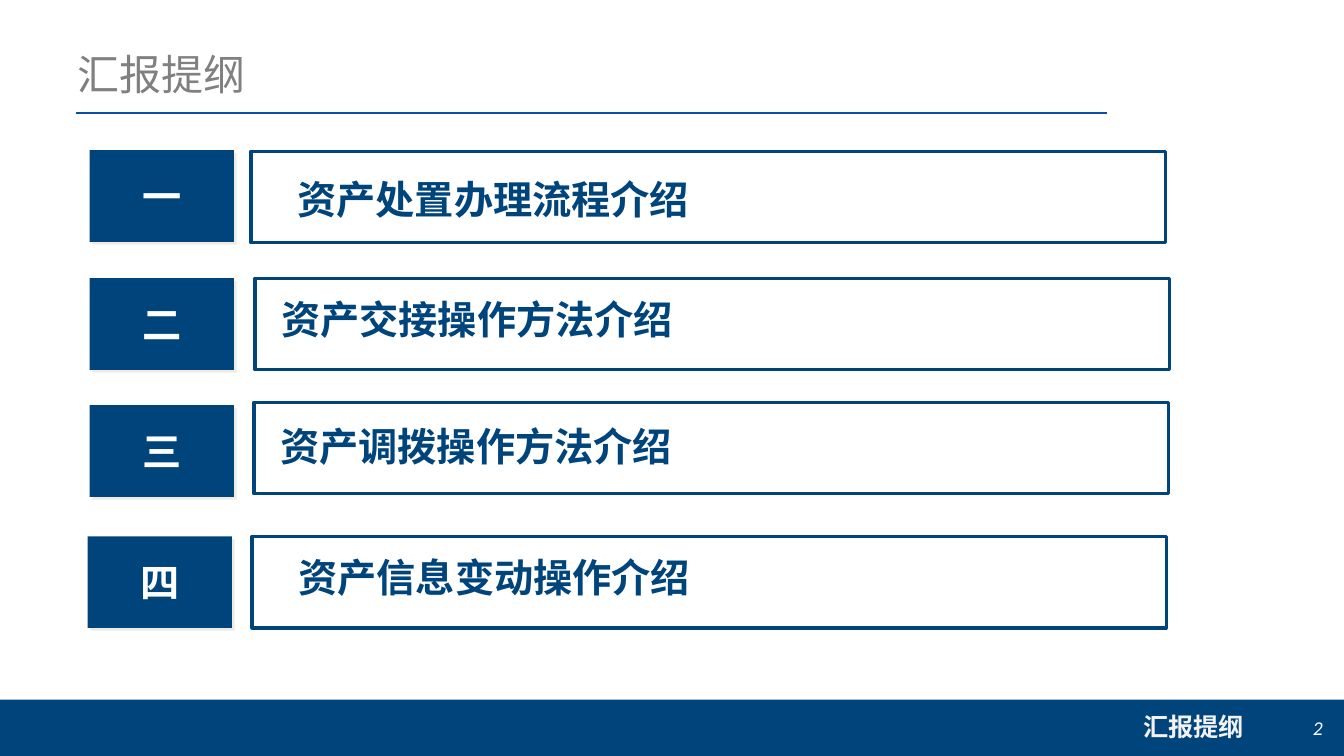
from lxml.etree import SubElement
from pptx import Presentation
from pptx.dml.color import RGBColor
from pptx.enum.shapes import MSO_CONNECTOR as Link, MSO_SHAPE as Shape
from pptx.enum.text import MSO_ANCHOR as Anchor, MSO_AUTO_SIZE as Fit, PP_ALIGN as Align
from pptx.oxml.ns import qn
from pptx.util import Inches, Pt

NAVY = RGBColor(0x00, 0x44, 0x7C)
BLUE = RGBColor(0x0B, 0x4D, 0xA2)
GRAY = RGBColor(0x80, 0x80, 0x80)
PALE = RGBColor(0xF2, 0xF2, 0xF2)
SAND = RGBColor(0xEE, 0xEC, 0xE1)
WHITE = RGBColor(0xFF, 0xFF, 0xFF)
HAN = "Noto Sans CJK SC"
HEAD = dict(name="Calibri", size=Pt(30), bold=False)
ITEM = dict(name=HAN, size=Pt(28), bold=True)
FOOT = dict(name=HAN, size=Pt(18), bold=True)
PAGE = dict(name="Calibri", size=Pt(14), italic=True)

# number, label, tile (left, top), frame (left, top), label (left, top)
ROWS = [
    ("一", "资产处置办理流程介绍", (0.89, 1.49), (2.49, 1.5), (2.95, 1.74)),
    ("二", "资产交接操作方法介绍", (0.89, 2.76), (2.53, 2.76), (2.79, 2.93)),
    ("三", "资产调拨操作方法介绍", (0.89, 4.02), (2.52, 3.99), (2.78, 4.19)),
    ("四", "资产信息变动操作介绍", (0.87, 5.32), (2.5, 5.32), (2.96, 5.49)),
]


def write(shape, text, style, color, align=Align.LEFT, anchor=Anchor.MIDDLE):
    frame = shape.text_frame
    layout = dict(word_wrap=True, auto_size=Fit.NONE, vertical_anchor=anchor)
    for key, value in layout.items():
        setattr(frame, key, value)
    para = frame.paragraphs[0]
    para.alignment = align
    run = para.add_run()
    run.text = text
    for key, value in style.items():
        setattr(run.font, key, value)
    run.font.color.rgb = color
    if style["name"] == HAN:
        SubElement(run._r.get_or_add_rPr(), qn("a:ea"), typeface=HAN)
    return para


def add_box(slide, left, top, width, height, fill, line=None):
    box = slide.shapes.add_shape(
        Shape.RECTANGLE, Inches(left), Inches(top), Inches(width), Inches(height))
    box.shadow.inherit = False
    box.fill.solid()
    box.fill.fore_color.rgb = fill
    if line is None:
        box.line.fill.background()
    else:
        box.line.color.rgb = line
        box.line.width = Pt(2.25)
    return box


def add_text(slide, left, top, width, height, text, style, color, align=Align.LEFT):
    """Add a text box without inner margins."""
    box = slide.shapes.add_textbox(
        Inches(left), Inches(top), Inches(width), Inches(height))
    for side in ("left", "top", "right", "bottom"):
        setattr(box.text_frame, f"margin_{side}", 0)
    write(box, text, style, color, align)


def cast_shadow(shape):
    effects = shape._element.spPr.find(qn("a:effectLst"))
    shade = SubElement(effects, qn("a:outerShdw"), dist=str(Pt(2.8)),
                       dir="2700000", algn="ctr", rotWithShape="0")
    SubElement(shade, qn("a:srgbClr"), val=str(SAND))


def add_rule(slide):
    rule = slide.shapes.add_connector(
        Link.STRAIGHT, Inches(0.75), Inches(1.12), Inches(10.98), Inches(1.12))
    rule.line.color.rgb = BLUE
    rule.line.width = Pt(1.5)
    SubElement(rule._element.spPr, qn("a:effectLst"))


def add_title(slide, text):
    title = slide.shapes.title
    place = dict(left=0.67, top=0.17, width=10.26, height=0.86)
    for key, value in place.items():
        setattr(title, key, Inches(value))
    para = write(title, text, HEAD, GRAY, anchor=Anchor.BOTTOM)
    para.line_spacing = 0.85


def add_row(slide, number, label, tile_at, frame_at, label_at):
    tile = add_box(slide, *tile_at, 1.43, 0.91, NAVY)
    cast_shadow(tile)
    write(tile, number, ITEM, WHITE, Align.CENTER)
    add_box(slide, *frame_at, 9.07, 0.91, WHITE, NAVY)
    add_text(slide, *label_at, 8.45, 0.47, label, ITEM, NAVY)


def main():
    deck = Presentation()
    deck.slide_width = Inches(13.33)
    deck.slide_height = Inches(7.5)
    slide = deck.slides.add_slide(deck.slide_layouts[5])
    add_box(slide, 0, 6.94, 13.33, 0.56, NAVY)
    add_rule(slide)
    add_title(slide, "汇报提纲")
    for row in ROWS:
        add_row(slide, *row)
    add_text(slide, 11.34, 7.01, 1.1, 0.4, "汇报提纲", FOOT, PALE)
    add_text(slide, 12.6, 7.02, 0.52, 0.4, "2", PAGE, WHITE, Align.RIGHT)
    deck.save("out.pptx")


if __name__ == "__main__":
    main()
